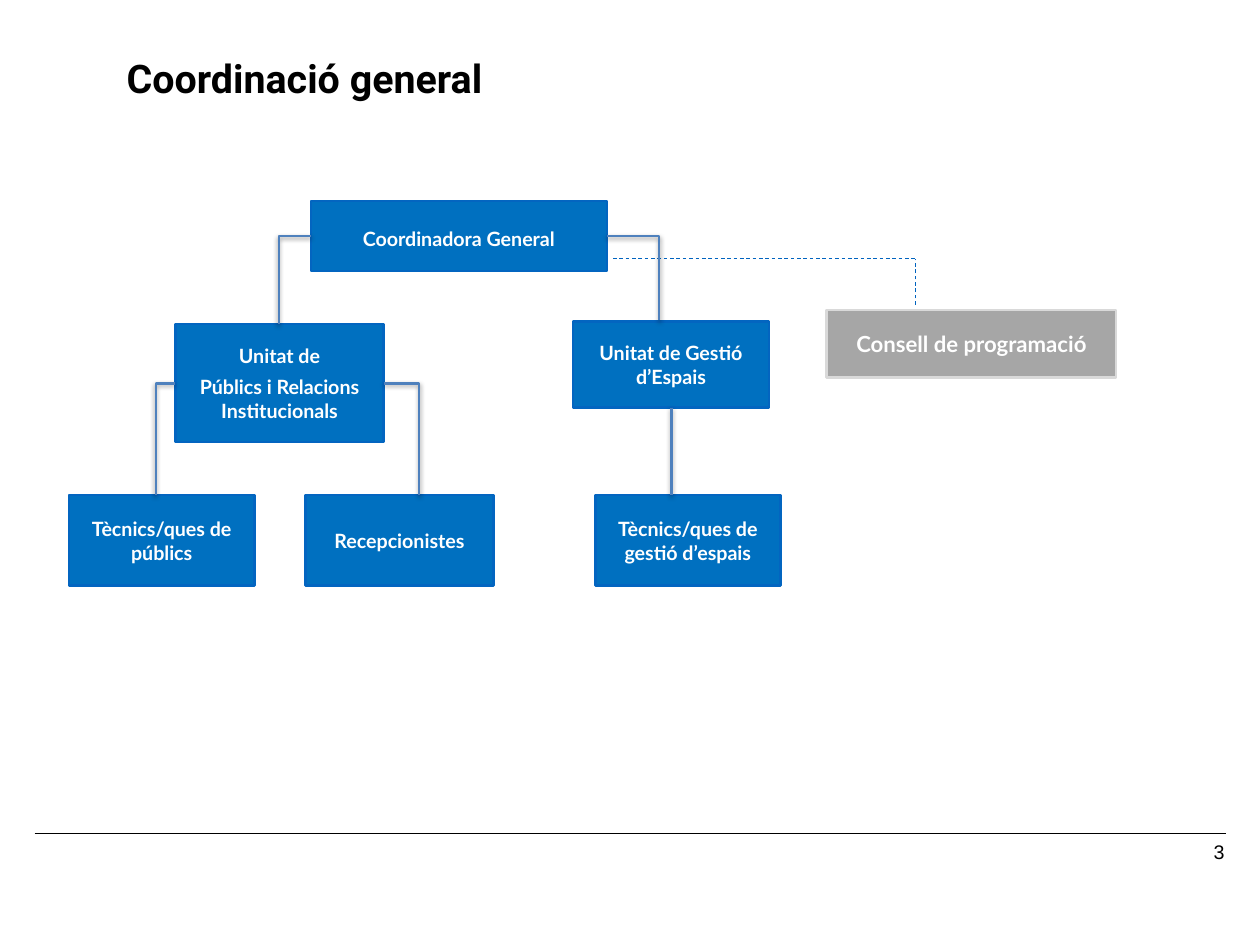
from dataclasses import dataclass

from lxml.etree import SubElement
from pptx import Presentation
from pptx.dml.color import RGBColor
from pptx.enum.dml import MSO_LINE as Dash
from pptx.enum.shapes import MSO_CONNECTOR as Route, MSO_SHAPE as Preset
from pptx.enum.text import MSO_ANCHOR as Anchor, PP_ALIGN as Align
from pptx.oxml.ns import qn
from pptx.util import Pt


@dataclass(frozen=True)
class Theme:
    unit_fill: str = "0070C0"
    unit_line: str = "0365C0"
    council_fill: str = "A6A6A6"
    council_line: str = "D9D9D9"
    branch: str = "4F81BD"
    advisory: str = "0063BF"
    ink: str = "000000"
    paper: str = "FFFFFF"
    title_size: float = 32
    council_size: float = 18
    body_size: float = 16
    title_font: str = "Roboto"
    unit_font: str = "Lato"
    number_font: str = "Arial"


THEME = Theme()


@dataclass(frozen=True)
class Unit:
    left: float
    top: float
    width: float
    height: float
    lines: tuple[str, ...]
    fill: str = THEME.unit_fill
    line: str = THEME.unit_line
    size: float = THEME.body_size
    inset_top: float = 3


@dataclass(frozen=True)
class Link:
    start: tuple[float, float]
    end: tuple[float, float]
    colour: str = THEME.branch
    width: float = 2
    dashed: bool = False
    shadow: bool = True


@dataclass(frozen=True)
class Label:
    left: float
    top: float
    width: float
    height: float
    text: str
    font: str
    size: float
    bold: bool
    align: Align
    spacing: float
    inset: tuple[float, float]


STAFF_TOP, STAFF_HEIGHT = 402.5, 73.4
HEAD_MIDDLE, PUBLIC_BASE, COUNCIL_LEVEL = 191.9, 311.8, 210.2

UNITS = (
    Unit(252.7, 163.4, 240.5, 56.9, ("Coordinadora General",), inset_top=7.5),
    Unit(142.6, 263.5, 169.2, 95.8, ("Unitat de", "Públics i Relacions Institucionals")),
    Unit(465.8, 261.4, 159.1, 69.8, ("Unitat de Gestió d’Espais",)),
    Unit(56.2, STAFF_TOP, 150.5, STAFF_HEIGHT, ("Tècnics/ques de públics",)),
    Unit(248.4, STAFF_TOP, 152.6, STAFF_HEIGHT, ("Recepcionistes",)),
    Unit(483.8, STAFF_TOP, 150.5, STAFF_HEIGHT, ("Tècnics/ques de gestió d’espais",)),
    Unit(671.8, 252, 235.4, 54.7, ("Consell de programació",),
         THEME.council_fill, THEME.council_line, THEME.council_size),
)

ADVISORY = {"colour": THEME.advisory, "width": 0.75, "dashed": True, "shadow": False}
LINKS = (
    Link((28.1, 677.5), (996.5, 677.5), THEME.ink, 1, shadow=False),
    Link((498.2, COUNCIL_LEVEL), (744.2, COUNCIL_LEVEL), **ADVISORY),
    Link((744.2, 247.7), (744.2, COUNCIL_LEVEL), **ADVISORY),
    Link((545.8, 331.2), (545.8, STAFF_TOP)),
    Link((252.7, HEAD_MIDDLE), (226.8, 263.5)),
    Link((493.2, HEAD_MIDDLE), (535.7, 259.9)),
    Link((142.6, PUBLIC_BASE), (126.7, STAFF_TOP)),
    Link((311.8, PUBLIC_BASE), (340.6, STAFF_TOP)),
)

LABELS = (
    Label(97.9, 46.1, 334.8, 41, "Coordinació general", THEME.title_font,
          THEME.title_size, True, Align.LEFT, 0.8, (5, 5)),
    Label(763.2, 679, 239, 29.5, "3", THEME.number_font,
          THEME.body_size, False, Align.RIGHT, 1, (7.2, 3.6)),
)


def apply(target: object, values: dict[str, object]) -> None:
    for name, value in values.items():
        setattr(target, name, value)


def write(para: object, text: str, font: str, size: float, bold: bool, colour: str) -> None:
    span = para.add_run()
    span.text = text
    apply(span.font, {"name": font, "size": Pt(size), "bold": bold})
    span.font.color.rgb = RGBColor.from_string(colour)


def draw_unit(page: object, unit: Unit) -> None:
    box = page.shapes.add_shape(
        Preset.RECTANGLE, Pt(unit.left), Pt(unit.top), Pt(unit.width), Pt(unit.height))
    box.shadow.inherit = False
    box.fill.solid()
    box.fill.fore_color.rgb = RGBColor.from_string(unit.fill)
    box.line.color.rgb = RGBColor.from_string(unit.line)
    box.line.width = Pt(2)
    frame = box.text_frame
    apply(frame, {"word_wrap": True, "vertical_anchor": Anchor.MIDDLE,
                  "margin_left": Pt(3), "margin_right": Pt(3),
                  "margin_top": Pt(unit.inset_top), "margin_bottom": Pt(3)})
    for index, line in enumerate(unit.lines):
        para = frame.add_paragraph() if index else frame.paragraphs[0]
        apply(para, {"alignment": Align.CENTER, "space_before": Pt(6.4 if index else 0)})
        write(para, line, THEME.unit_font, unit.size, True, THEME.paper)


def draw_link(page: object, link: Link) -> None:
    (x1, y1), (x2, y2) = link.start, link.end
    bent = x1 != x2 and y1 != y2
    connector = page.shapes.add_connector(
        Route.ELBOW if bent else Route.STRAIGHT, Pt(x1), Pt(y1), Pt(x2), Pt(y2))
    connector.line.color.rgb = RGBColor.from_string(link.colour)
    connector.line.width = Pt(link.width)
    if link.dashed:
        connector.line.dash_style = Dash.DASH
    properties = connector._element.spPr
    if bent:
        properties.find(qn("a:prstGeom")).set("prst", "bentConnector2")
    effects = SubElement(properties, qn("a:effectLst"))
    if link.shadow:
        shadow = SubElement(effects, qn("a:outerShdw"), blurRad=str(Pt(4)),
                            dist=str(Pt(2)), dir="5400000", rotWithShape="0")
        colour = SubElement(shadow, qn("a:srgbClr"), val=THEME.ink)
        SubElement(colour, qn("a:alpha"), val="38000")


def draw_label(page: object, label: Label) -> None:
    box = page.shapes.add_textbox(
        Pt(label.left), Pt(label.top), Pt(label.width), Pt(label.height))
    across, down = map(Pt, label.inset)
    apply(box.text_frame, {"word_wrap": True, "margin_left": across, "margin_right": across,
                           "margin_top": down, "margin_bottom": down})
    para = box.text_frame.paragraphs[0]
    apply(para, {"alignment": label.align, "line_spacing": label.spacing})
    write(para, label.text, label.font, label.size, label.bold, THEME.ink)


def main() -> None:
    deck = Presentation()
    apply(deck, {"slide_width": Pt(1024), "slide_height": Pt(768)})
    page = deck.slides.add_slide(deck.slide_layouts[6])
    for draw, items in ((draw_unit, UNITS), (draw_link, LINKS), (draw_label, LABELS)):
        for item in items:
            draw(page, item)
    deck.save("out.pptx")


if __name__ == "__main__":
    main()
